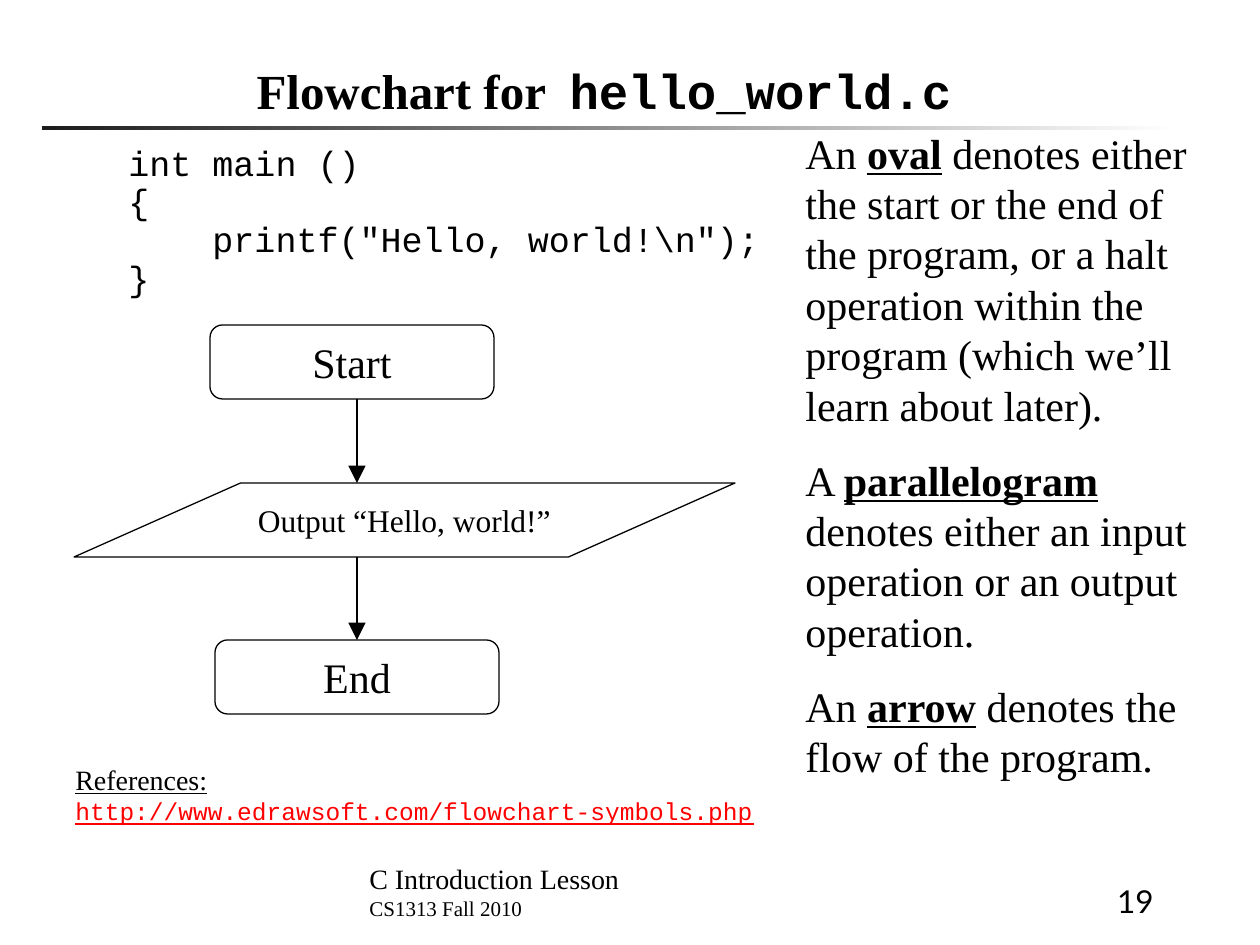
"""Build the flowchart slide for hello_world.c."""
from dataclasses import dataclass

from lxml.etree import SubElement
from pptx import Presentation
from pptx.dml.color import RGBColor
from pptx.enum.shapes import MSO_CONNECTOR, MSO_SHAPE
from pptx.enum.text import MSO_ANCHOR, MSO_AUTO_SIZE, PP_ALIGN
from pptx.oxml.ns import qn
from pptx.util import Emu, Pt


@dataclass(frozen=True)
class Theme:
    ink: RGBColor = RGBColor(0, 0, 0)
    link: RGBColor = RGBColor(255, 0, 0)
    bar: RGBColor = RGBColor(0x1C, 0x1C, 0x1C)
    paper: RGBColor = RGBColor(255, 255, 255)
    serif: str = "Times New Roman"
    mono: str = "Courier New"
    sans: str = "Lato"
    title: int = 28
    text: int = 24
    code: int = 20
    step: int = 18
    note: int = 16
    url: int = 14
    small: int = 12


T = Theme()


def px(*values):
    return [Emu(round(v * 914400 / 126)) for v in values]


def write(p, text, size, name=T.serif, color=T.ink):
    p.font.size = Pt(size)
    p.font.name = name
    p.font.color.rgb = color
    if text:
        p.add_run().text = text


prs = Presentation()
prs.slide_width, prs.slide_height = px(1260, 945)
s = prs.slides.add_slide(prs.slide_layouts[5])

bar = s.shapes.add_shape(MSO_SHAPE.RECTANGLE, *px(42, 126, 1134, 4))
bar.shadow.inherit = False
bar.line.fill.background()
bar.fill.gradient()
bar.fill.gradient_angle = 0
for stop, color in zip(bar.fill.gradient_stops, (T.bar, T.paper)):
    stop.color.rgb = color

title = s.shapes.title
title.left, title.top, title.width, title.height = px(53, 53, 1102, 73)
tf = title.text_frame
tf.auto_size = MSO_AUTO_SIZE.NONE
tf.vertical_anchor = MSO_ANCHOR.BOTTOM
p = tf.paragraphs[0]
p.alignment = PP_ALIGN.CENTER
write(p, "Flowchart for  ", T.title)
p.font.bold = True
r = p.add_run()
r.text = "hello_world.c"
r.font.name = T.mono

frames = {}
for key, box, anchor in (
    ("code", (116, 147, 662, 340), MSO_ANCHOR.TOP),
    ("legend", (793, 121, 420, 667), MSO_ANCHOR.TOP),
    ("references", (63, 756, 725, 77), MSO_ANCHOR.TOP),
    ("footer", (357, 864, 609, 63), MSO_ANCHOR.BOTTOM),
    ("number", (987, 863, 179, 63), MSO_ANCHOR.BOTTOM),
):
    tf = s.shapes.add_textbox(*px(*box)).text_frame
    tf.word_wrap = True
    tf.vertical_anchor = anchor
    frames[key] = tf

code = ("int main ()", "{", '    printf("Hello, world!\\n");', "}")
for i, line in enumerate(code):
    p = frames["code"].add_paragraph() if i else frames["code"].paragraphs[0]
    p.line_spacing = 0.7
    if i:
        p.space_before = Pt(5)
    write(p, line, T.code, T.mono)

legend = (
    ("An ", "oval", "denotes either the start or the end of the program, or a halt "
     "operation within the program (which we’ll learn about later)."),
    ("A ", "parallelogram", "denotes either an input operation or an output operation."),
    ("An ", "arrow", "denotes the flow of the program."),
)
for i, (article, term, meaning) in enumerate(legend):
    p = frames["legend"].add_paragraph() if i else frames["legend"].paragraphs[0]
    p.line_spacing = Pt(28.8)
    if i:
        p.space_before = Pt(14)
    write(p, article, T.text)
    r = p.add_run()
    r.text = term
    r.font.bold = r.font.underline = True
    p.add_run().text = " " + meaning

p = frames["references"].paragraphs[0]
write(p, "References:", T.note)
p.font.underline = True
p = frames["references"].add_paragraph()
write(p, "http://www.edrawsoft.com/flowchart-symbols.php", T.url, T.mono, T.link)
p.font.underline = True

write(frames["footer"].paragraphs[0], "C Introduction Lesson", T.note)
write(frames["footer"].add_paragraph(), "CS1313 Fall 2010", T.small)

p = frames["number"].paragraphs[0]
p.alignment = PP_ALIGN.RIGHT
write(p, "19", T.step, T.sans)

steps = []
for kind, adj, box, label, size in (
    (MSO_SHAPE.ROUNDED_RECTANGLE, 0.17, (210, 325, 284, 74), "Start", T.text),
    (MSO_SHAPE.PARALLELOGRAM, 2.25, (74, 483, 661, 74), "Output “Hello, world!”", T.step),
    (MSO_SHAPE.ROUNDED_RECTANGLE, 0.17, (215, 640, 284, 74), "End", T.text),
):
    sp = s.shapes.add_shape(kind, *px(*box))
    sp.adjustments[0] = adj
    sp.shadow.inherit = False
    sp.fill.background()
    sp.line.color.rgb = T.ink
    sp.line.width = Pt(0.75)
    tf = sp.text_frame
    tf.word_wrap = True
    tf.margin_left = tf.margin_right = tf.margin_top = tf.margin_bottom = 0
    tf.vertical_anchor = MSO_ANCHOR.MIDDLE
    p = tf.paragraphs[0]
    p.alignment = PP_ALIGN.CENTER
    write(p, label, size)
    steps.append(sp)

for top, bottom in ((399, 483), (557, 640)):
    arrow = s.shapes.add_connector(MSO_CONNECTOR.STRAIGHT, *px(357, top, 357, bottom))
    arrow.line.color.rgb = T.ink
    arrow.line.width = Pt(0.75)
    SubElement(arrow.line._get_or_add_ln(), qn("a:tailEnd"), type="triangle", w="lg", len="lg")
    SubElement(arrow._element.spPr, qn("a:effectLst"))
arrow.end_connect(steps[-1], 0)

prs.save("out.pptx")
